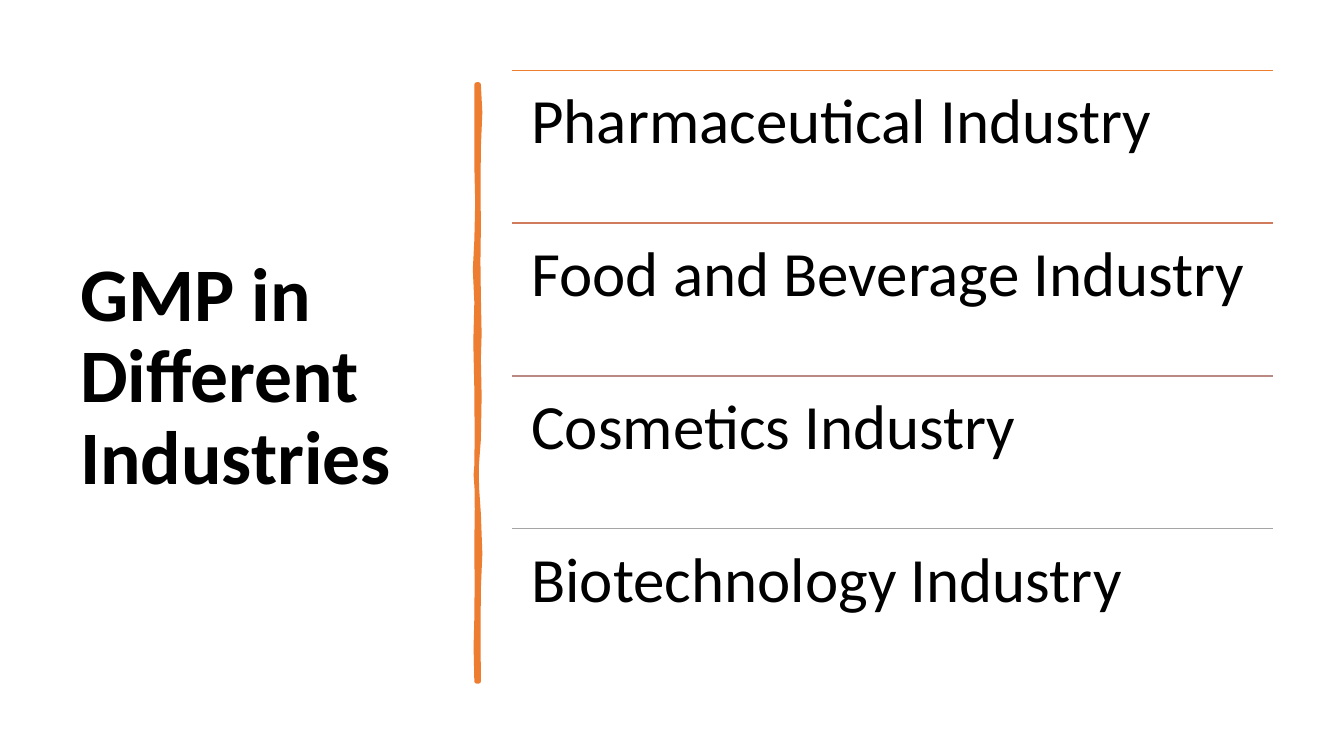
from typing import NamedTuple

from lxml import etree
from pptx import Presentation
from pptx import util as u
from pptx.dml.color import RGBColor
from pptx.enum import shapes, text
from pptx.oxml import ns

ORANGE = "ED7D31"
BLACK = "000000"
LIST_LEFT, LIST_TOP, LIST_WIDTH, ROW_HEIGHT = 12.9, 1.77, 19.18, 3.85
BRUSH_TOP, BRUSH_BOTTOM, BRUSH_LEFT, BRUSH_RIGHT = 2.13, 17.17, 12.01, 12.06


class Industry(NamedTuple):
    name: str
    rule_color: str


class Wave(NamedTuple):
    bulge1: float
    y1: float
    bulge2: float
    y2: float
    end: float


INDUSTRIES = [
    Industry("Pharmaceutical Industry", ORANGE),
    Industry("Food and Beverage Industry", "D17B5C"),
    Industry("Cosmetics Industry", "B98A82"),
    Industry("Biotechnology Industry", "A5A5A5"),
]

RIGHT_EDGE = [
    Wave(0.05, 2.59, 0.05, 3.02, 3.71),
    Wave(-0.05, 4.39, 0.03, 4.95, 5.74),
    Wave(-0.03, 6.53, 0, 6.65, 7.47),
    Wave(0, 8.26, 0.05, 8.69, 9.04),
    Wave(-0.05, 9.4, 0.1, 10.52, 11.07),
    Wave(-0.1, 11.61, -0.08, 12.29, 12.95),
    Wave(0.05, 13.61, 0.05, 14.33, 14.83),
    Wave(-0.05, 15.32, 0.03, 16.51, BRUSH_BOTTOM),
]

LEFT_EDGE = [
    Wave(-0.08, 16.48, 0.03, 16.05, 15.57),
    Wave(-0.03, 15.11, 0.05, 14.45, 13.69),
    Wave(-0.05, 12.95, 0.08, 12.7, 11.96),
    Wave(-0.08, 11.23, 0.1, 10.67, 9.8),
    Wave(-0.1, 8.92, 0.03, 8.26, 7.62),
    Wave(-0.05, 6.99, -0.05, 6.58, 6.05),
    Wave(0.03, 5.49, 0.03, 4.7, 4.17),
    Wave(-0.05, 3.63, 0.05, 3.07, BRUSH_TOP),
]


def rgb(color: str) -> RGBColor:
    return RGBColor.from_string(color)


def place(sp, left: float, top: float, width: float, height: float) -> None:
    sp.left, sp.top, sp.width, sp.height = map(u.Cm, (left, top, width, height))


def write(sp, content: str, *, size: float, bold: bool = False,
          anchor=text.MSO_ANCHOR.TOP, inset_x: float, inset_y: float) -> None:
    tf = sp.text_frame
    tf.word_wrap = True
    tf.auto_size = text.MSO_AUTO_SIZE.NONE
    tf.vertical_anchor = anchor
    tf.margin_left = tf.margin_right = u.Cm(inset_x)
    tf.margin_top = tf.margin_bottom = u.Cm(inset_y)
    p = tf.paragraphs[0]
    p.alignment = text.PP_ALIGN.LEFT
    p.line_spacing = 0.9
    r = p.add_run()
    r.text = content
    r.font.name = "Calibri"
    r.font.size = u.Pt(size)
    r.font.bold = bold
    r.font.color.rgb = rgb(BLACK)


def turned(x: float, y: float) -> tuple[int, int]:
    return u.Cm(y), u.Cm(-x)


def edge_points(x: float, start: float, waves: list[Wave]) -> list[tuple[int, int]]:
    points = []
    for wave in waves:
        middle_x = x + 0.375 * (wave.bulge1 + wave.bulge2)
        middle_y = (start + 3 * wave.y1 + 3 * wave.y2 + wave.end) / 8
        points += [turned(middle_x, middle_y), turned(x, wave.end)]
        start = wave.end
    return points


def add_divider(s) -> None:
    builder = s.shapes.build_freeform(*turned(BRUSH_RIGHT, BRUSH_TOP))
    builder.add_line_segments(
        edge_points(BRUSH_RIGHT, BRUSH_TOP, RIGHT_EDGE)
        + [turned(BRUSH_LEFT, BRUSH_BOTTOM)]
        + edge_points(BRUSH_LEFT, BRUSH_BOTTOM, LEFT_EDGE),
        close=True,
    )
    sp = builder.convert_to_shape()
    center_x = -(sp.top + sp.height // 2)
    center_y = sp.left + sp.width // 2
    sp.left = center_x - sp.width // 2
    sp.top = center_y - sp.height // 2
    sp.rotation = 90
    sp.shadow.inherit = False
    sp.fill.solid()
    sp.fill.fore_color.rgb = rgb(ORANGE)
    sp.line.color.rgb = rgb(ORANGE)
    sp.line.width = u.Pt(3.25)
    etree.SubElement(sp.line._get_or_add_ln(), ns.qn("a:round"))


def add_industry(s, industry: Industry, top: float) -> None:
    rule = s.shapes.add_connector(
        shapes.MSO_CONNECTOR.STRAIGHT,
        u.Cm(LIST_LEFT), u.Cm(top), u.Cm(LIST_LEFT + LIST_WIDTH), u.Cm(top),
    )
    rule.line.color.rgb = rgb(industry.rule_color)
    rule.line.width = u.Pt(1)
    etree.SubElement(rule._element.spPr, ns.qn("a:effectLst"))

    sp = s.shapes.add_textbox(0, 0, 0, 0)
    place(sp, LIST_LEFT, top, LIST_WIDTH, ROW_HEIGHT)
    write(sp, industry.name, size=45, inset_x=0.49, inset_y=0.48)


def main() -> None:
    prs = Presentation()
    prs.slide_width, prs.slide_height = u.Cm(33.87), u.Cm(19.05)
    s = prs.slides.add_slide(prs.slide_layouts[5])

    title = s.shapes.title
    place(title, 1.77, 1.77, 9.5, 15.52)
    write(title, "GMP in Different Industries", size=54, bold=True,
          anchor=text.MSO_ANCHOR.MIDDLE, inset_x=0.25, inset_y=0.13)

    add_divider(s)
    for row, industry in enumerate(INDUSTRIES):
        add_industry(s, industry, LIST_TOP + row * ROW_HEIGHT)

    prs.save("out.pptx")


if __name__ == "__main__":
    main()
